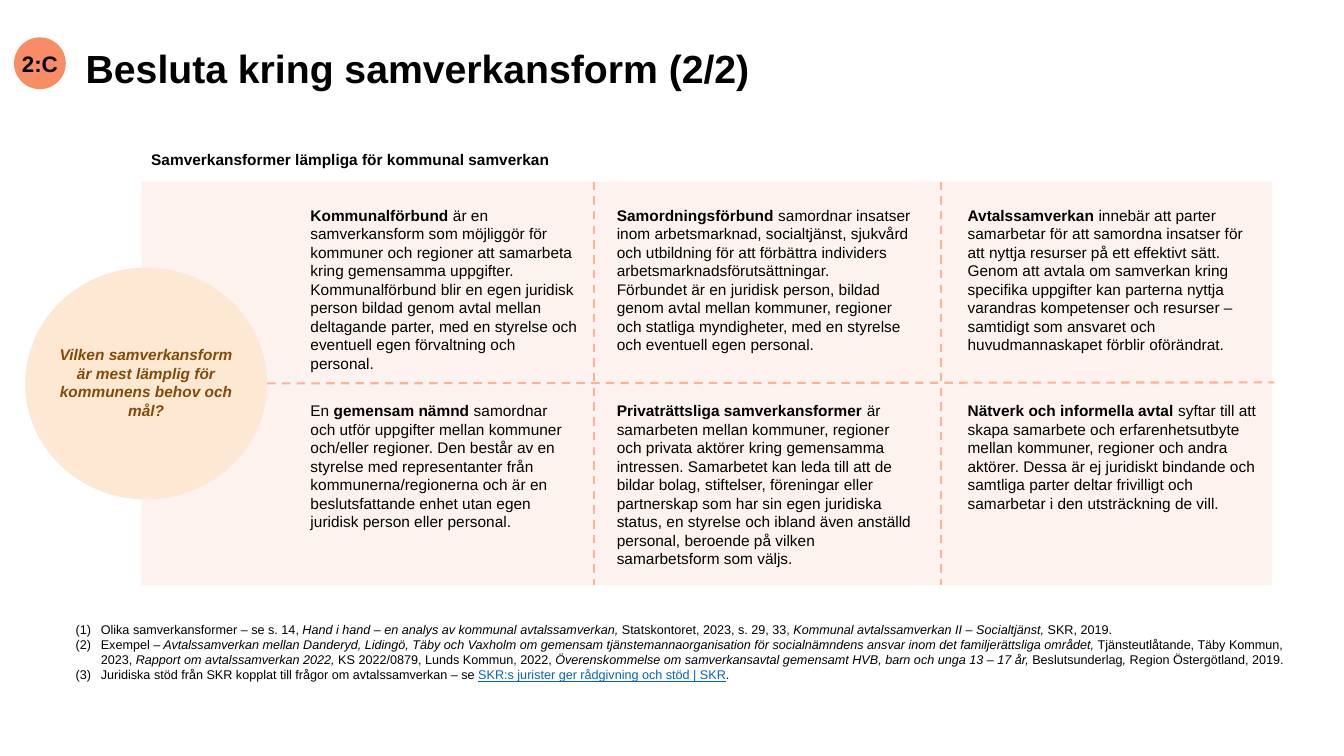
from collections import namedtuple
from dataclasses import dataclass

from lxml.etree import SubElement
from pptx import Presentation
from pptx.dml.color import RGBColor
from pptx.enum.dml import MSO_LINE
from pptx.enum.shapes import MSO_CONNECTOR, MSO_SHAPE
from pptx.enum.text import MSO_ANCHOR, MSO_AUTO_SIZE, PP_ALIGN
from pptx.oxml.ns import qn
from pptx.util import Pt

Box = namedtuple("Box", "left top width height")


@dataclass(frozen=True)
class Theme:
    font: str = "Arial"
    text: str = "000000"
    panel: str = "FDD9CB"
    panel_alpha: int = 32
    divider: str = "FAB398"
    badge: str = "F88C64"
    question_fill: str = "FDE9D3"
    question_text: str = "854A07"
    link: str = "0563C1"
    title_size: float = 28
    badge_size: float = 16
    body_size: float = 11
    note_size: float = 9


THEME = Theme()
BOLD = {"bold": True}
ITALIC = {"italic": True}
LINK = {"underline": True, "color": THEME.link}

# Each cell: text width, number of lines, paragraphs made of (text, format) runs
FORMS = [
    [
        (206.6, 9, [[("Kommunalförbund ", BOLD), ("är en samverkansform som möjliggör för kommuner och regioner att samarbeta kring gemensamma uppgifter. Kommunalförbund blir en egen juridisk person bildad genom avtal mellan deltagande parter, med en styrelse och eventuell egen förvaltning och personal.", {})]]),
        (225.4, 8, [
            [("Samordningsförbund ", BOLD), ("samordnar insatser inom arbetsmarknad, socialtjänst, sjukvård och utbildning för att förbättra individers arbetsmarknadsförutsättningar.", {})],
            [("Förbundet är en juridisk person, bildad genom avtal mellan kommuner, regioner och statliga myndigheter, med en styrelse och eventuell egen personal.", {})],
        ]),
        (225.4, 8, [[("Avtalssamverkan ", BOLD), ("innebär att parter samarbetar för att samordna insatser för att nyttja resurser på ett effektivt sätt. Genom att avtala om samverkan kring specifika uppgifter kan parterna nyttja varandras kompetenser och resurser – samtidigt som ansvaret och huvudmannaskapet förblir oförändrat.", {})]]),
    ],
    [
        (200.2, 7, [[("En ", {}), ("gemensam nämnd ", BOLD), ("samordnar och utför uppgifter mellan kommuner och/eller regioner. Den består av en styrelse med representanter från kommunerna/regionerna och är en beslutsfattande enhet utan egen juridisk person eller personal.", {})]]),
        (225.4, 9, [[("Privaträttsliga samverkansformer ", BOLD), ("är samarbeten mellan kommuner, regioner och privata aktörer kring gemensamma intressen. Samarbetet kan leda till att de bildar bolag, stiftelser, föreningar eller partnerskap som har sin egen juridiska status, en styrelse och ibland även anställd personal, beroende på vilken samarbetsform som väljs.", {})]]),
        (225.4, 6, [[("Nätverk och informella avtal ", BOLD), ("syftar till att skapa samarbete och erfarenhetsutbyte mellan kommuner, regioner och andra aktörer. Dessa är ej juridiskt bindande och samtliga parter deltar frivilligt och samarbetar i den utsträckning de vill.", {})]]),
    ],
]

NOTES = [
    [("Olika samverkansformer – se s. 14, ", {}), ("Hand i hand – en analys av kommunal avtalssamverkan, ", ITALIC),
     ("Statskontoret, 2023, s. 29, 33, ", {}), ("Kommunal avtalssamverkan II – Socialtjänst, ", ITALIC), ("SKR, 2019.", {})],
    [("Exempel", {}), (" – Avtalssamverkan mellan Danderyd, Lidingö, Täby och Vaxholm om gemensam tjänstemannaorganisation för socialnämndens ansvar inom det familjerättsliga området, ", ITALIC),
     ("Tjänsteutlåtande, Täby Kommun, 2023, ", {}), ("Rapport om avtalssamverkan 2022, ", ITALIC),
     ("KS 2022/0879, Lunds Kommun, 2022, ", {}),
     ("Överenskommelse om samverkansavtal gemensamt HVB, barn och unga 13 – 17 år, ", ITALIC),
     ("Beslutsunderlag", {}), (", ", ITALIC), ("Region Östergötland, 2019.", {})],
    [("Juridiska stöd från SKR kopplat till frågor om avtalssamverkan – se ", {}),
     ("SKR:s jurister ger rådgivning och stöd | SKR", LINK), (".", {})],
]


def place(shape, box):
    for name, value in box._asdict().items():
        setattr(shape, name, Pt(value))


def write(text_frame, paragraphs, size, alignment=PP_ALIGN.LEFT, **common):
    text_frame.word_wrap = True
    for index, runs in enumerate(paragraphs):
        paragraph = text_frame.add_paragraph() if index else text_frame.paragraphs[0]
        paragraph.alignment = alignment
        paragraph.space_before = Pt(0)
        for text, extra in runs:
            run = paragraph.add_run()
            run.text = text
            values = {"name": THEME.font, "size": Pt(size), "color": THEME.text, **common, **extra}
            run.font.color.rgb = RGBColor.from_string(values.pop("color"))
            for name, value in values.items():
                setattr(run.font, name, value)


def add_text(slide, box, paragraphs, **values):
    shape = slide.shapes.add_textbox(*map(Pt, box))
    shape.text_frame.auto_size = MSO_AUTO_SIZE.SHAPE_TO_FIT_TEXT
    write(shape.text_frame, paragraphs, THEME.body_size, **values)


def add_filled(slide, kind, box, color):
    shape = slide.shapes.add_shape(kind, *map(Pt, box))
    shape.shadow.inherit = False
    shape.fill.solid()
    shape.fill.fore_color.rgb = RGBColor.from_string(color)
    shape.line.fill.background()
    return shape


def add_divider(slide, *ends):
    line = slide.shapes.add_connector(MSO_CONNECTOR.STRAIGHT, *map(Pt, ends))
    line.line.color.rgb = RGBColor.from_string(THEME.divider)
    line.line.width = Pt(1.5)
    line.line.dash_style = MSO_LINE.DASH
    SubElement(line._element.spPr, qn("a:effectLst"))


def build_header(slide, box):
    # Title and round step badge
    title = slide.shapes.title
    place(title, Box(box.left + 44, box.top + 1.4, box.width - 44, 44))
    title.text_frame.auto_size = MSO_AUTO_SIZE.NONE
    title.text_frame.vertical_anchor = MSO_ANCHOR.MIDDLE
    write(title.text_frame, [[("Besluta kring samverkansform (2/2)", BOLD)]], THEME.title_size)
    title.text_frame.paragraphs[0].line_spacing = 0.95

    badge = add_filled(slide, MSO_SHAPE.OVAL, Box(box.left, box.top, 37, 37), THEME.badge)
    frame = badge.text_frame
    for side in ("left", "top", "right", "bottom"):
        setattr(frame, f"margin_{side}", 0)
    frame.vertical_anchor = MSO_ANCHOR.MIDDLE
    write(frame, [[("2:C", BOLD)]], THEME.badge_size, PP_ALIGN.CENTER)


def build_forms_panel(slide, box):
    # Translucent panel with its heading
    panel = add_filled(slide, MSO_SHAPE.RECTANGLE, box, THEME.panel)
    color = panel._element.spPr.find(qn("a:solidFill"))[0]
    SubElement(color, qn("a:alpha"), val=str(THEME.panel_alpha * 1000))
    add_text(slide, Box(box.left, box.top - 26, 325, 20.6),
             [[("Samverkansformer lämpliga för kommunal samverkan", BOLD)]])

    # Grid of cooperation forms
    column_offsets, row_offsets = (113.8, 332.6, 583.2), (13.7, 153.4)
    for row_offset, row in zip(row_offsets, FORMS):
        for column_offset, (width, lines, paragraphs) in zip(column_offsets, row):
            height = round(lines * 13.3 + 7.2, 2)
            add_text(slide, Box(box.left + column_offset, box.top + row_offset, width, height), paragraphs)

    # Dashed dividers
    for offset in (323.3, 571):
        add_divider(slide, box.left + offset, box.top, box.left + offset, box.top + box.height)
    middle = box.top + box.height / 2
    add_divider(slide, box.left + 90, middle, box.left + box.width + 1.4, middle - 0.7)


def build_question(slide, box):
    # Circle with the guiding question
    add_filled(slide, MSO_SHAPE.OVAL, box, THEME.question_fill)
    add_text(slide, Box(box.left + 14.4, box.top + 51.8, box.width - 28.8, 60.5),
             [[("Vilken samverkansform är mest lämplig för kommunens behov och mål?", ITALIC)]],
             alignment=PP_ALIGN.CENTER, bold=True, color=THEME.question_text)


def build_notes(slide, box):
    # Numbered source notes
    body = slide.placeholders[1]
    place(body, box)
    body.text_frame.auto_size = MSO_AUTO_SIZE.NONE
    write(body.text_frame, NOTES, THEME.note_size)
    for paragraph in body.text_frame.paragraphs:
        properties = paragraph._p.get_or_add_pPr()
        for name, value in {"marL": Pt(18), "indent": -Pt(18)}.items():
            properties.set(name, str(int(value)))
        SubElement(properties, qn("a:buFont"), typeface=THEME.font)
        SubElement(properties, qn("a:buAutoNum"), type="arabicParenBoth")


def main():
    presentation = Presentation()
    presentation.slide_width, presentation.slide_height = Pt(960), Pt(540)
    slide = presentation.slides.add_slide(presentation.slide_layouts[1])
    build_header(slide, Box(10, 26.7, 800.7, 45.4))
    build_forms_panel(slide, Box(100.9, 129.7, 807.8, 288.3))
    build_question(slide, Box(18, 191.2, 172.8, 165.6))
    build_notes(slide, Box(46.8, 440.6, 885.6, 51))
    presentation.save("out.pptx")


if __name__ == "__main__":
    main()
